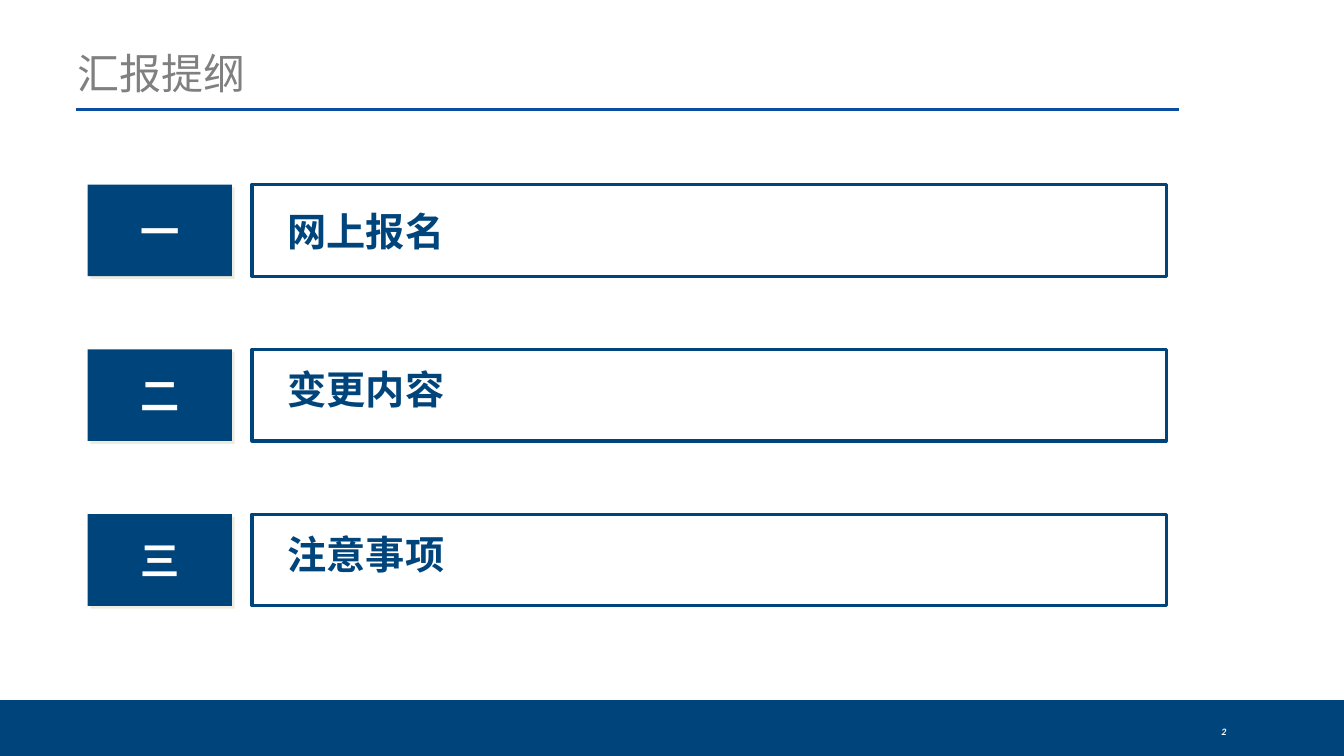
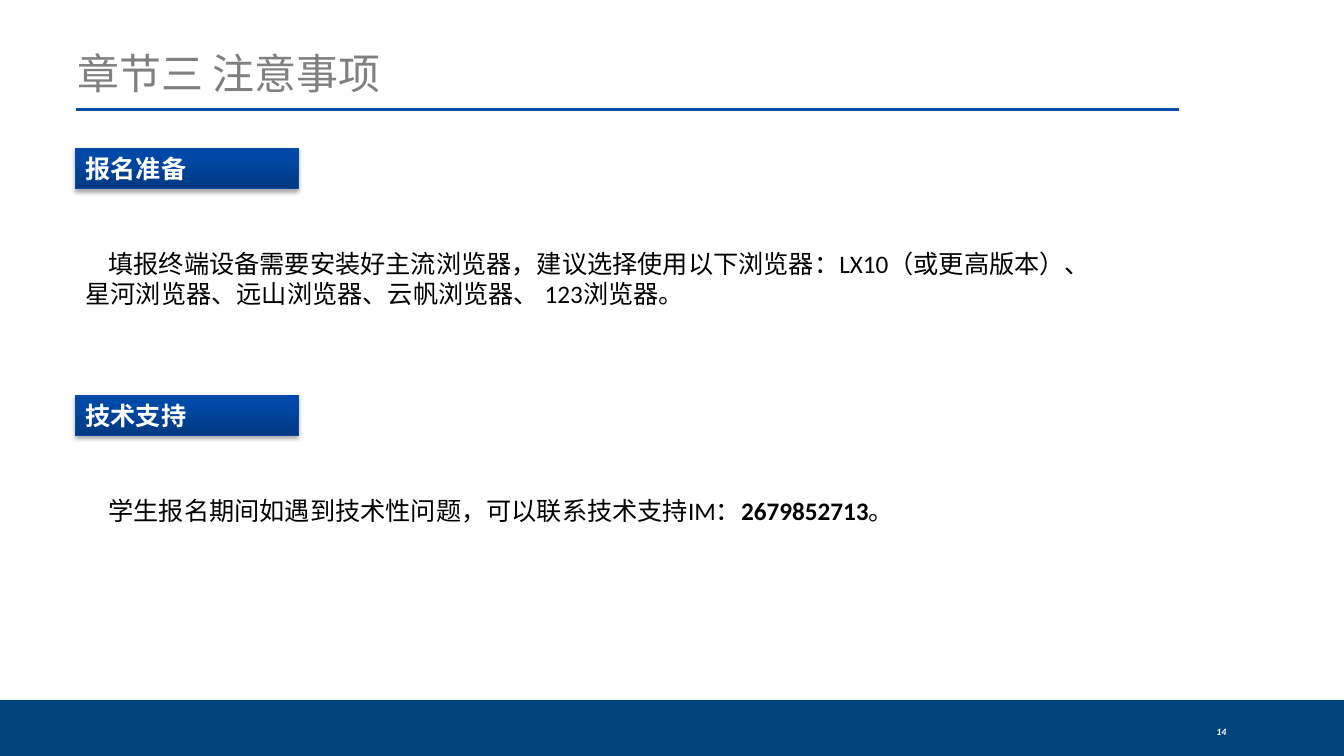
from dataclasses import dataclass

from lxml import etree
from pptx import Presentation
from pptx.dml.color import RGBColor
from pptx.enum.shapes import MSO_CONNECTOR, MSO_SHAPE
from pptx.enum.text import MSO_ANCHOR, MSO_AUTO_SIZE, PP_ALIGN
from pptx.oxml.ns import qn
from pptx.util import Pt

RECT, STRAIGHT = MSO_SHAPE.RECTANGLE, MSO_CONNECTOR.STRAIGHT
TOP, MIDDLE, BOTTOM = MSO_ANCHOR.TOP, MSO_ANCHOR.MIDDLE, MSO_ANCHOR.BOTTOM
LEFT, CENTER, RIGHT = PP_ALIGN.LEFT, PP_ALIGN.CENTER, PP_ALIGN.RIGHT
NO_FIT = MSO_AUTO_SIZE.NONE


@dataclass(frozen=True)
class Theme:
    """Colours, fonts and type sizes of the deck."""
    navy: str = "00447C"
    rule: str = "0B4DA2"
    tag_line: str = "074BA2"
    tag_dark: str = "003881"
    tag_light: str = "0049A8"
    grey: str = "808080"
    black: str = "000000"
    white: str = "FFFFFF"
    pale: str = "EEECE1"
    font: str = "Calibri"
    cjk_font: str = "Noto Sans CJK SC"
    title_size: float = 30
    agenda_size: float = 28
    body_size: float = 18
    page_size: float = 7


THEME = Theme()


def rgb(color):
    """Turn a hex string into a colour."""
    return RGBColor.from_string(color)


def write(tf, text, size=THEME.body_size, color=THEME.black, font=THEME.font,
          bold=False, italic=False, align=LEFT, anchor=TOP,
          insets=(7.2, 3.6, 7.2, 3.6), indent=0, spacing=None):
    """Fill a text frame with one paragraph; text is a string or (string, bold) pairs."""
    tf.word_wrap, tf.auto_size, tf.vertical_anchor = True, NO_FIT, anchor
    tf.margin_left, tf.margin_top, tf.margin_right, tf.margin_bottom = map(Pt, insets)
    p = tf.paragraphs[0]
    p.alignment, p.line_spacing = align, spacing
    if indent:
        p._p.get_or_add_pPr().set("indent", str(Pt(indent)))
    for part, strong in [(text, bold)] if isinstance(text, str) else text:
        r = p.add_run()
        r.text = part
        f = r.font
        f.name, f.size, f.bold, f.italic = font, Pt(size), strong, italic
        f.color.rgb = rgb(color)
        if font == THEME.cjk_font:
            etree.SubElement(r._r.get_or_add_rPr(), qn("a:ea"), typeface=font)


class Deck:
    """Holds the theme, the presentation and the current slide."""

    def __init__(self, theme):
        """Start an empty widescreen deck."""
        self.theme = theme
        self.prs = Presentation()
        self.prs.slide_width, self.prs.slide_height = Pt(960), Pt(540)
        self.s = None

    def slide(self, title, page):
        """Add a slide with its title, rule, footer band and page number."""
        t = self.theme
        self.s = self.prs.slides.add_slide(self.prs.slide_layouts[5])
        self.box(0, 500, 960, 40, fill=t.navy)
        sp = self.s.shapes.title
        sp.left, sp.top, sp.width, sp.height = map(Pt, (48, 12, 739, 62))
        write(sp.text_frame, title, size=t.title_size, color=t.grey,
              anchor=BOTTOM, spacing=0.85)
        self.rule(54, 842.4, 78)
        self.text(780, 508, 103, 29, page, size=t.page_size, color=t.white,
                  bold=True, italic=True, align=RIGHT, anchor=MIDDLE)

    def box(self, x, y, w, h, fill=None, line=None, weight=2.25):
        """Add a flat rectangle."""
        sp = self.s.shapes.add_shape(RECT, *map(Pt, (x, y, w, h)))
        sp.shadow.inherit = False
        if fill:
            sp.fill.solid()
            sp.fill.fore_color.rgb = rgb(fill)
        if line:
            sp.line.color.rgb = rgb(line)
            sp.line.width = Pt(weight)
        else:
            sp.line.fill.background()
        return sp

    def shadow(self, sp, color, alpha, blur, dist, angle):
        """Give a shape an outer shadow."""
        effects = sp.element.spPr.find(qn("a:effectLst"))
        outer = etree.SubElement(effects, qn("a:outerShdw"), blurRad=str(Pt(blur)),
                                 dist=str(Pt(dist)), dir=str(angle * 60000),
                                 algn="ctr", rotWithShape="0")
        clr = etree.SubElement(outer, qn("a:srgbClr"), val=color)
        etree.SubElement(clr, qn("a:alpha"), val=str(alpha * 1000))

    def text(self, x, y, w, h, text, **fmt):
        """Add a text box."""
        sp = self.s.shapes.add_textbox(*map(Pt, (x, y, w, h)))
        write(sp.text_frame, text, **fmt)

    def rule(self, x1, x2, y):
        """Add a horizontal line."""
        c = self.s.shapes.add_connector(STRAIGHT, *map(Pt, (x1, y, x2, y)))
        c.line.color.rgb = rgb(self.theme.rule)
        c.line.width = Pt(2.25)
        etree.SubElement(c.element.spPr, qn("a:effectLst"))

    def agenda_row(self, y, numeral, label, lift):
        """Add a numbered block and its framed label, raised by lift."""
        t = self.theme
        fmt = dict(size=t.agenda_size, font=t.cjk_font, bold=True, anchor=MIDDLE)
        block = self.box(62.6, y, 103, 65.5, fill=t.navy)
        self.shadow(block, t.pale, 100, 0, 2.8, 45)
        write(block.text_frame, numeral, color=t.white, align=CENTER, **fmt)
        frame = self.box(180, y, 653, 65.5, fill=t.white, line=t.navy)
        write(frame.text_frame, label, color=t.navy,
              insets=(25.5, 0, 0, 2 * lift), **fmt)

    def section(self, y, heading, body):
        """Add a gradient heading tag with a paragraph below it."""
        t = self.theme
        tag = self.box(54, y, 159, 29, line=t.tag_line, weight=0.75)
        tag.fill.gradient()
        tag.fill.gradient_angle = 90
        for stop, color, pos in zip(tag.fill.gradient_stops,
                                    (t.tag_dark, t.tag_light), (0, 0.8)):
            stop.color.rgb, stop.position = rgb(color), pos
        self.shadow(tag, t.black, 35, 3.1, 1.8, 90)
        write(tag.text_frame, heading, color=t.white, bold=True)
        self.text(54, y + 67.7, 731.5, 51, body, indent=16.4)


def main():
    """Build and save the deck."""
    deck = Deck(THEME)

    deck.slide("汇报提纲", "2")
    agenda = (("一", "网上报名", 0), ("二", "变更内容", 4.5), ("三", "注意事项", 4.5))
    for i, row in enumerate(agenda):
        deck.agenda_row(131.8 + i * 117.7, *row)

    deck.slide("章节三 注意事项", "14")
    sections = (
        ("报名准备", "填报终端设备需要安装好主流浏览器，建议选择使用以下浏览器：LX10"
                 "（或更高版本）、星河浏览器、远山浏览器、云帆浏览器、 123浏览器。"),
        ("技术支持", (("学生报名期间如遇到技术性问题，可以联系技术支持IM：", False),
                  ("2679852713", True), ("。", False))),
    )
    for i, section in enumerate(sections):
        deck.section(105.8 + i * 176.4, *section)

    deck.prs.save("out.pptx")


if __name__ == "__main__":
    main()
